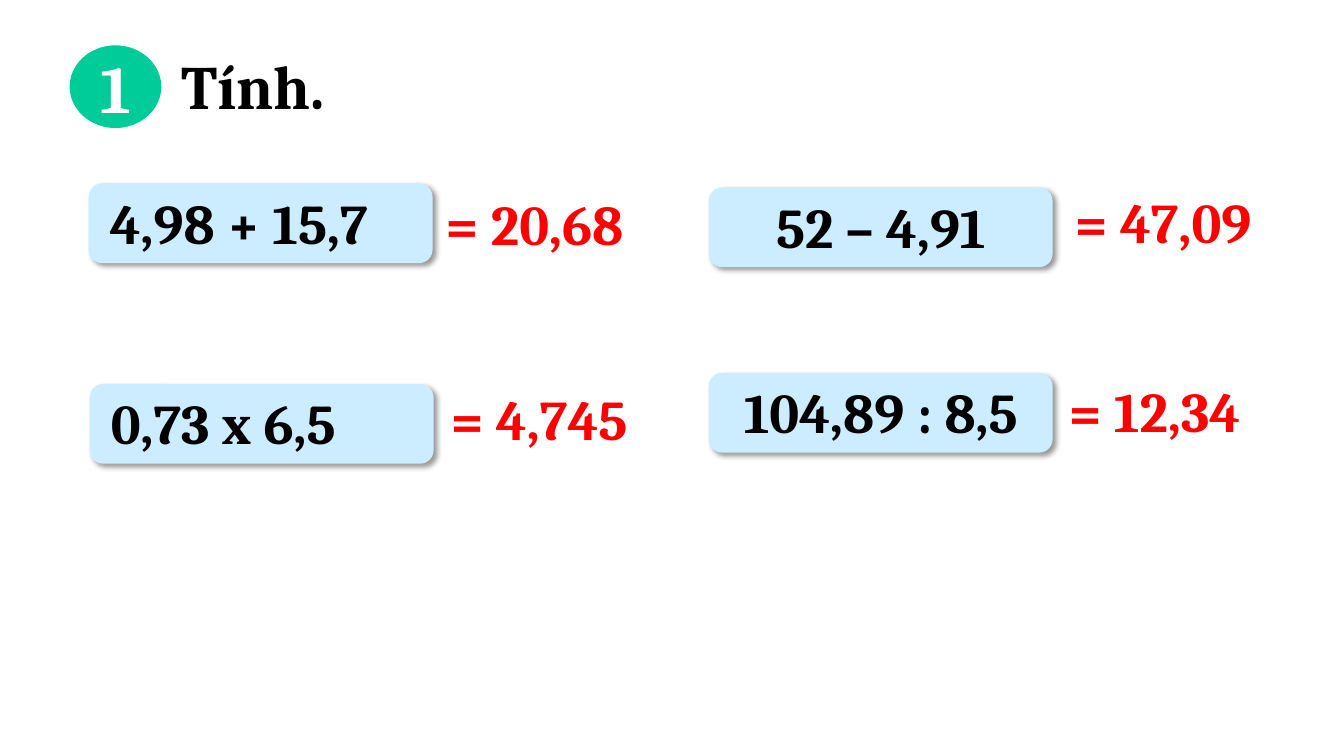
from lxml import etree
from pptx import Presentation
from pptx.dml.color import RGBColor
from pptx.enum.shapes import MSO_SHAPE as SHAPE
from pptx.enum.text import MSO_ANCHOR as ANCHOR, MSO_AUTO_SIZE as AUTO, PP_ALIGN as ALIGN
from pptx.oxml import parse_xml
from pptx.oxml.ns import nsdecls, qn
from pptx.util import Inches, Pt

FONT = "Cambria"
COLORS = {
    "badge": "00CC99",
    "card": "CCECFF",
    "answer": "FF0000",
    "black": "000000",
    "white": "FFFFFF",
}
CARD_W, CARD_H, TEXT_H = 3.41, 0.79, 0.77
CARD_INSET = 0.11
ANSWER_W = 2.43
EXERCISES = [
    ("4,98 + 15,7", (0.88, 1.82), ALIGN.LEFT, "= 20,68", (4.32, 1.83)),
    ("52 – 4,91", (7.03, 1.86), ALIGN.CENTER, "= 47,09", (10.56, 1.81)),
    ("0,73 x 6,5", (0.89, 3.81), ALIGN.LEFT, "= 4,745", (4.37, 3.77)),
    ("104,89 : 8,5", (7.03, 3.7), ALIGN.CENTER, "= 12,34", (10.5, 3.69)),
]


def rgb(name):
    return RGBColor.from_string(COLORS[name])


def write(sp, text, size=40, color="black", align=ALIGN.LEFT, anchor=ANCHOR.TOP, auto=AUTO.NONE):
    tf = sp.text_frame
    tf.word_wrap = True
    tf.auto_size = auto
    tf.vertical_anchor = anchor
    p = tf.paragraphs[0]
    p.alignment = align
    r = p.add_run()
    r.text = text
    r.font.name = FONT
    r.font.size = Pt(size)
    r.font.bold = True
    r.font.color.rgb = rgb(color)


def add_label(shapes, text, x, y, w, **fmt):
    sp = shapes.add_textbox(Inches(x), Inches(y), Inches(w), Inches(TEXT_H))
    write(sp, text, auto=AUTO.SHAPE_TO_FIT_TEXT, **fmt)


def add_filled(shapes, kind, x, y, w, h, fill):
    sp = shapes.add_shape(kind, Inches(x), Inches(y), Inches(w), Inches(h))
    sp.shadow.inherit = False
    sp.fill.solid()
    sp.fill.fore_color.rgb = rgb(fill)
    sp.line.fill.background()
    return sp


def add_shadow(sp):
    effects = sp.element.spPr.find(qn("a:effectLst"))
    shadow = parse_xml(
        f'<a:outerShdw {nsdecls("a")} blurRad="{Pt(4)}" dist="{Pt(3)}" '
        'dir="2700000" algn="tl" rotWithShape="0"/>'
    )
    color = etree.SubElement(shadow, qn("a:srgbClr"), val=COLORS["black"])
    etree.SubElement(color, qn("a:alpha"), val="40000")
    effects.append(shadow)


def add_card(slide, text, x, y, align):
    group = slide.shapes.add_group_shape()
    sp = add_filled(group.shapes, SHAPE.ROUNDED_RECTANGLE, x, y, CARD_W, CARD_H, "card")
    add_shadow(sp)
    add_label(group.shapes, text, x + CARD_INSET, y, CARD_W - 2 * CARD_INSET, align=align)


def add_heading(slide, number, text):
    badge = add_filled(slide.shapes, SHAPE.OVAL, 0.69, 0.45, 0.91, 0.82, "badge")
    write(badge, number, size=48, color="white", align=ALIGN.CENTER, anchor=ANCHOR.MIDDLE)
    title = slide.shapes.title
    title.left, title.top = Inches(1.7), Inches(0.43)
    title.width, title.height = Inches(2.12), Inches(0.84)
    write(title, text, size=44)


def main():
    prs = Presentation()
    prs.slide_width, prs.slide_height = Inches(13.33), Inches(7.5)
    slide = prs.slides.add_slide(prs.slide_layouts[5])
    add_heading(slide, "1", "Tính.")
    for task, card_at, align, answer, answer_at in EXERCISES:
        add_card(slide, task, *card_at, align)
        add_label(slide.shapes, answer, *answer_at, ANSWER_W, color="answer")
    prs.save("out.pptx")


if __name__ == "__main__":
    main()
